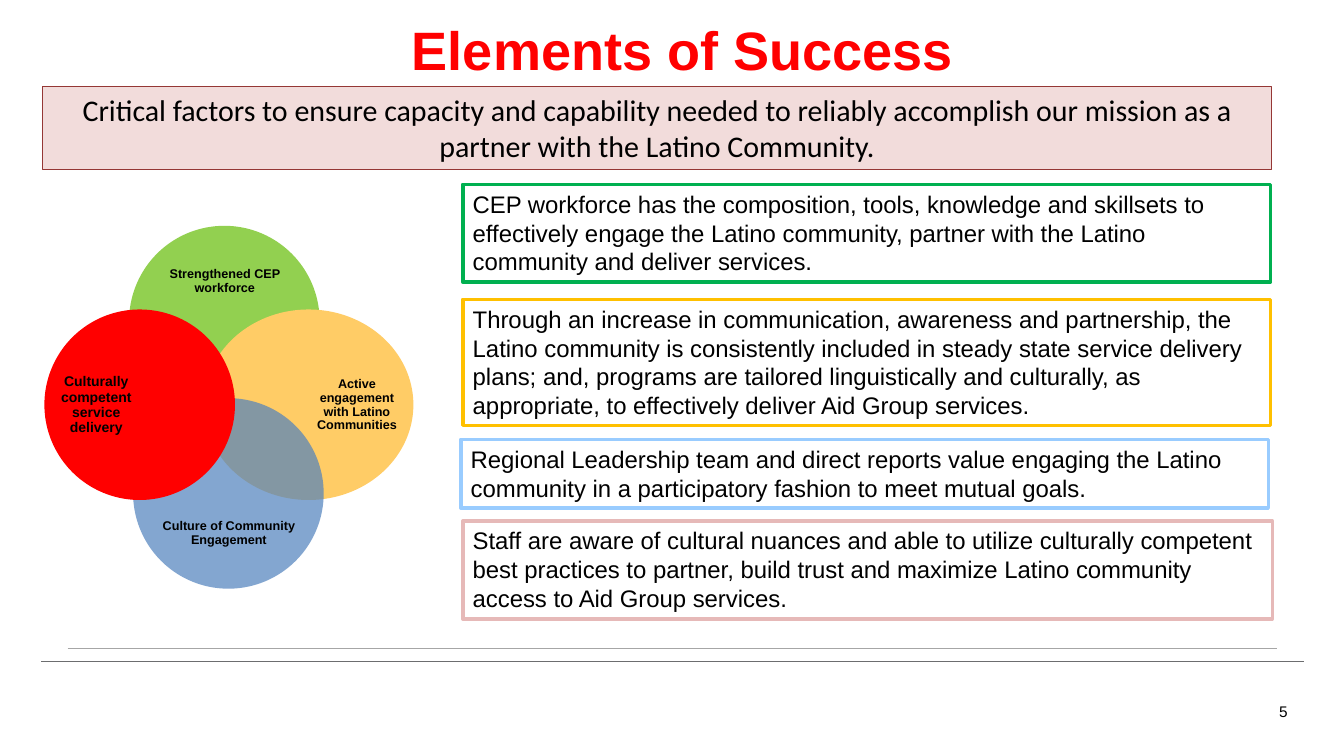
from dataclasses import dataclass

from lxml.etree import SubElement
from pptx import Presentation
from pptx.dml.color import RGBColor
from pptx.enum.shapes import MSO_CONNECTOR, MSO_SHAPE
from pptx.enum.text import MSO_ANCHOR, MSO_AUTO_SIZE, PP_ALIGN
from pptx.oxml.ns import qn
from pptx.util import Inches, Pt


@dataclass(frozen=True)
class Theme:
    heading_font: str = "Arial"
    banner_font: str = "Calibri"
    text: str = "000000"
    red: str = "FF0000"
    banner_fill: str = "F2DCDB"
    banner_line: str = "953735"
    green_line: str = "00B050"
    amber_line: str = "FFC000"
    sky_line: str = "99CCFF"
    rose_line: str = "E6B9B8"
    green: str = "92D050"
    amber: str = "FFCC66"
    blue: str = "4F81BD"
    upper_rule: str = "A6A6A6"
    lower_rule: str = "6C6D6F"
    title_size: float = 38.6
    banner_size: float = 21.4
    statement_size: float = 17.1
    number_size: float = 11
    label_size: float = 9
    large_label_size: float = 10
    thin_line: float = 0.75
    frame_line: float = 2.5


@dataclass(frozen=True)
class Box:
    """An area of the slide grid, whose columns and rows are one inch each."""
    left: float
    top: float
    width: float
    height: float

    def cell(self, column, row, columns, rows):
        return Box(self.left + column, self.top + row, columns, rows)

    def lengths(self):
        return [Inches(value) for value in (self.left, self.top, self.width, self.height)]


THEME = Theme()
PAGE = Box(0, 0, 13.33, 7.5)


def write(shape, text, size, font=THEME.heading_font, color=THEME.text, bold=False,
          align=PP_ALIGN.LEFT, anchor=MSO_ANCHOR.TOP, inset=None, spacing=None):
    frame = shape.text_frame
    frame.text = text
    frame_format = {"word_wrap": True, "auto_size": MSO_AUTO_SIZE.NONE,
                    "vertical_anchor": anchor}
    if inset is not None:
        for side in ("left", "top", "right", "bottom"):
            frame_format[f"margin_{side}"] = Inches(inset)
    paragraph = frame.paragraphs[0]
    formats = (
        (frame, frame_format),
        (paragraph, {"alignment": align, "line_spacing": spacing}),
        (paragraph.font, {"name": font, "size": Pt(size), "bold": bold}),
    )
    for target, values in formats:
        for name, value in values.items():
            setattr(target, name, value)
    paragraph.font.color.rgb = RGBColor.from_string(color)


def add_plain_shape(slide, box, kind, fill=None, line=None, line_width=THEME.thin_line):
    shape = slide.shapes.add_shape(kind, *box.lengths())
    shape.shadow.inherit = False
    if fill:
        shape.fill.solid()
        shape.fill.fore_color.rgb = RGBColor.from_string(fill)
    else:
        shape.fill.background()
    if line:
        shape.line.color.rgb = RGBColor.from_string(line)
        shape.line.width = Pt(line_width)
    else:
        shape.line.fill.background()
    return shape


def add_title(slide, box):
    title = slide.shapes.title
    title.left, title.top, title.width, title.height = box.lengths()
    write(title, "Elements of Success", THEME.title_size, color=THEME.red, bold=True,
          align=PP_ALIGN.CENTER, anchor=MSO_ANCHOR.MIDDLE, inset=0, spacing=0.9)


def add_banner(slide, box):
    banner = add_plain_shape(slide, box, MSO_SHAPE.RECTANGLE,
                             THEME.banner_fill, THEME.banner_line)
    write(banner, "Critical factors to ensure capacity and capability needed to reliably "
          "accomplish our mission as a partner with the Latino Community.",
          THEME.banner_size, font=THEME.banner_font, align=PP_ALIGN.CENTER)


def add_statements(slide, box):
    # Column, row, columns, rows within the region; frame colour; wording
    statements = (
        ((0.02, 0, 8.01, 0.97), THEME.green_line,
         "CEP workforce has the composition, tools, knowledge and skillsets to effectively "
         "engage the Latino community, partner with the Latino community and deliver "
         "services."),
        ((0.02, 1.14, 8.01, 1.25), THEME.amber_line,
         "Through an increase in communication, awareness and partnership, the Latino "
         "community is consistently included in steady state service delivery plans; and, "
         "programs are tailored linguistically and culturally, as appropriate, to "
         "effectively deliver Aid Group services."),
        ((0, 2.53, 8.01, 0.68), THEME.sky_line,
         "Regional Leadership team and direct reports value engaging the Latino community "
         "in a participatory fashion to meet mutual goals."),
        ((0.02, 3.34, 8.03, 0.97), THEME.rose_line,
         "Staff are aware of cultural nuances and able to utilize culturally competent best "
         "practices to partner, build trust and maximize Latino community access to "
         "Aid Group services."),
    )
    for cells, color, text in statements:
        frame = add_plain_shape(slide, box.cell(*cells), MSO_SHAPE.RECTANGLE,
                                line=color, line_width=THEME.frame_line)
        write(frame, text, THEME.statement_size)


def add_venn(slide, box):
    # Circle cells, colour, opacity, label cells, label size, wording; back to front
    circle = 1.89
    wide, tall = (1.46, 0.6), (0.8, 1.46)
    petals = (
        ((0.84, 0, circle, circle), THEME.green, 100,
         (1.06, 0.25, *wide), THEME.label_size, "Strengthened CEP workforce"),
        ((1.58, 0.83, 2.08, circle), THEME.amber, 100,
         (2.7, 1.05, *tall), THEME.label_size, "Active engagement with Latino Communities"),
        ((0.88, 1.71, circle, circle), THEME.blue, 70,
         (1.1, 2.75, *wide), THEME.label_size, "Culture of Community Engagement"),
        ((0, 0.83, circle, circle), THEME.red, 100,
         (0.15, 1.05, 0.73, 1.46), THEME.large_label_size,
         "Culturally competent service delivery"),
    )
    for cells, color, opacity, label_cells, size, text in petals:
        petal = add_plain_shape(slide, box.cell(*cells), MSO_SHAPE.OVAL, color)
        if opacity < 100:
            fill_color = petal._element.spPr.find(f"{qn('a:solidFill')}/{qn('a:srgbClr')}")
            SubElement(fill_color, qn("a:alpha")).set("val", str(opacity * 1000))
        label = slide.shapes.add_textbox(*box.cell(*label_cells).lengths())
        write(label, text, size, bold=True, align=PP_ALIGN.CENTER,
              anchor=MSO_ANCHOR.MIDDLE, inset=0, spacing=0.9)
        label.text_frame.paragraphs[0].space_after = Pt(0.35 * size)


def add_footer(slide, box):
    # Start column, end column, row, colour of each rule
    rules = (
        (0, 12.52, 0.13, THEME.lower_rule),
        (0.26, 12.26, 0, THEME.upper_rule),
    )
    for start, end, row, color in rules:
        height = Inches(box.top + row)
        rule = slide.shapes.add_connector(
            MSO_CONNECTOR.STRAIGHT, Inches(box.left + start), height,
            Inches(box.left + end), height)
        rule.line.color.rgb = RGBColor.from_string(color)
        rule.line.width = Pt(THEME.thin_line)
        SubElement(rule._element.spPr, qn("a:effectLst"))
    # Page number
    number = slide.shapes.add_textbox(*box.cell(11.92, 0.49, 0.54, 0.29).lengths())
    write(number, "5", THEME.number_size, align=PP_ALIGN.RIGHT)


def main():
    presentation = Presentation()
    presentation.slide_width = Inches(PAGE.width)
    presentation.slide_height = Inches(PAGE.height)
    slide = presentation.slides.add_slide(presentation.slide_layouts[5])
    add_footer(slide, PAGE.cell(0.41, 6.43, 12.52, 0.78))
    add_title(slide, PAGE.cell(2.27, 0.14, 9, 0.77))
    add_banner(slide, PAGE.cell(0.42, 0.86, 12.19, 0.82))
    add_statements(slide, PAGE.cell(4.57, 1.83, 8.05, 4.31))
    add_venn(slide, PAGE.cell(0.44, 2.24, 3.66, 3.6))
    presentation.save("out.pptx")


if __name__ == "__main__":
    main()
